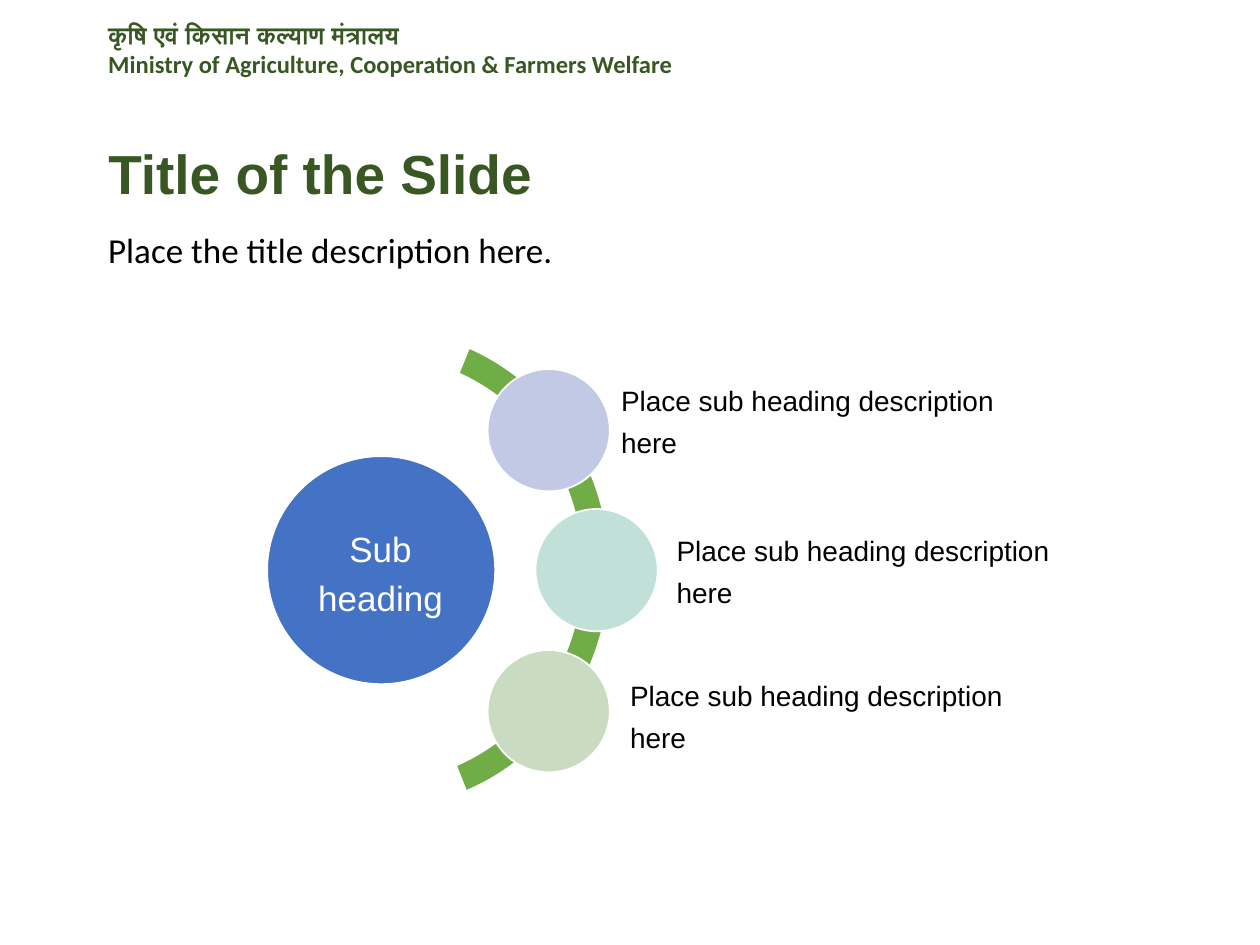
"""Build a title slide body with a hub circle, an arc and three described nodes."""
from dataclasses import dataclass

from pptx import Presentation
from pptx import util as u
from pptx.dml.color import RGBColor
from pptx.enum import shapes, text

GREEN = "385723"
NODE_SIZE = 0.97
NODE_TEXT = "Place sub heading description here"


@dataclass(frozen=True)
class Box:
    left: float
    top: float
    width: float
    height: float

    def lengths(self) -> tuple:
        return tuple(u.Inches(value) for value in (self.left, self.top, self.width, self.height))


@dataclass(frozen=True)
class TextStyle:
    size: float
    color: str
    font: str = "Arial"
    bold: bool = False
    spacing: object = None
    align: object = text.PP_ALIGN.LEFT
    anchor: object = text.MSO_ANCHOR.TOP
    margins: tuple = (0.1, 0.05)


@dataclass(frozen=True)
class Node:
    left: float
    top: float
    color: str
    text_left: float
    text_top: float


NODES = (
    Node(3.87, 2.93, "C1C9E4", 4.91, 3.1),
    Node(4.25, 4.04, "C1E0D7", 5.35, 4.29),
    Node(3.87, 5.16, "C9DBC1", 4.98, 5.44),
)
HEADER = TextStyle(14, GREEN, "Calibri", True)
TITLE = TextStyle(31.4, GREEN, bold=True, spacing=0.8)
DESCRIPTION = TextStyle(20, "000000", "Calibri", spacing=0.9)
HUB = TextStyle(20, "FFFFFF", spacing=u.Pt(28), align=text.PP_ALIGN.CENTER,
                anchor=text.MSO_ANCHOR.MIDDLE, margins=(0.03, 0.03))
NODE = TextStyle(16, "000000", spacing=u.Pt(24), anchor=text.MSO_ANCHOR.MIDDLE,
                 margins=(0.02, 0.02))


def rgb(value: str) -> RGBColor:
    """Turn a hex string into a colour."""
    return RGBColor.from_string(value)


def set_attributes(target, values: dict) -> None:
    """Set every named attribute on the target."""
    for name, value in values.items():
        setattr(target, name, value)


def write_text(shape, lines: tuple, style: TextStyle) -> None:
    """Fill a shape with one paragraph per line in the given style."""
    frame = shape.text_frame
    across, down = (u.Inches(margin) for margin in style.margins)
    set_attributes(frame, {
        "word_wrap": True, "auto_size": text.MSO_AUTO_SIZE.NONE,
        "vertical_anchor": style.anchor, "margin_left": across,
        "margin_right": across, "margin_top": down, "margin_bottom": down,
    })
    frame.text = "\n".join(lines)
    for paragraph in frame.paragraphs:
        set_attributes(paragraph, {
            "alignment": style.align, "line_spacing": style.spacing,
            "space_before": u.Pt(0),
        })
        for run in paragraph.runs:
            set_attributes(run.font, {
                "name": style.font, "size": u.Pt(style.size), "bold": style.bold,
            })
            run.font.color.rgb = rgb(style.color)


def add_text(slide, box: Box, lines: tuple, style: TextStyle) -> None:
    """Add a text box."""
    write_text(slide.shapes.add_textbox(*box.lengths()), lines, style)


def add_outlined(slide, kind, box: Box, color: str):
    """Add a filled preset shape with a thin white outline."""
    shape = slide.shapes.add_shape(kind, *box.lengths())
    shape.shadow.inherit = False
    shape.fill.solid()
    shape.fill.fore_color.rgb = rgb(color)
    shape.line.color.rgb = rgb("FFFFFF")
    shape.line.width = u.Pt(1)
    return shape


def add_node(slide, node: Node) -> None:
    """Add a small circle and the description beside it."""
    circle = Box(node.left, node.top, NODE_SIZE, NODE_SIZE)
    add_outlined(slide, shapes.MSO_SHAPE.OVAL, circle, node.color)
    add_text(slide, Box(node.text_left, node.text_top, 3.11, 0.42), (NODE_TEXT,), NODE)


def main() -> None:
    """Build and save the slide."""
    presentation = Presentation()
    set_attributes(presentation, {"slide_width": u.Inches(10), "slide_height": u.Inches(7.5)})
    slide = presentation.slides.add_slide(presentation.slide_layouts[5])

    add_text(slide, Box(0.76, 0.11, 5.09, 0.81), (
        "कृषि एवं किसान कल्याण मंत्रालय",
        "Ministry of Agriculture, Cooperation & Farmers Welfare",
    ), HEADER)
    title = slide.shapes.title
    left, top, width, height = Box(0.76, 1.16, 4.6, 0.47).lengths()
    set_attributes(title, {"left": left, "top": top, "width": width, "height": height})
    write_text(title, ("Title of the Slide",), TITLE)
    add_text(slide, Box(0.76, 1.8, 5.39, 0.37), ("Place the title description here.",), DESCRIPTION)

    add_outlined(slide, shapes.MSO_SHAPE.OVAL, Box(2.12, 3.62, 1.81, 1.81), "4472C4")
    add_text(slide, Box(2.38, 3.88, 1.28, 1.28), ("Sub heading",), HUB)
    arc = add_outlined(slide, shapes.MSO_SHAPE.BLOCK_ARC, Box(1.18, 2.61, 3.66, 3.81), "70AD47")
    for index, value in enumerate((175.28, 41.19, 0.06)):
        arc.adjustments[index] = value
    for node in NODES:
        add_node(slide, node)

    presentation.save("out.pptx")


if __name__ == "__main__":
    main()
